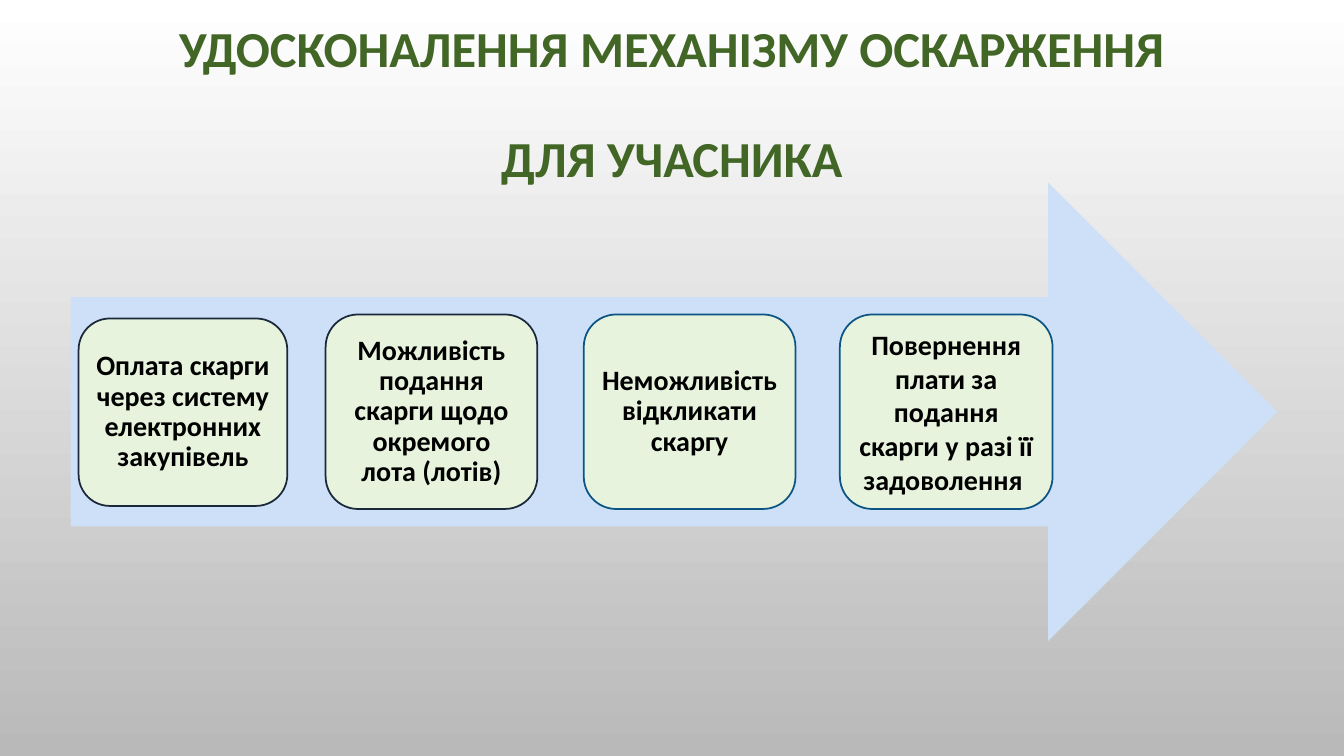
from dataclasses import dataclass

from pptx import Presentation
from pptx import util as u
from pptx.dml.color import RGBColor
from pptx.enum import shapes, text

COLORS = {
    "bg_top": "FFFFFF",
    "bg_bottom": "B9B9B9",
    "title": "426626",
    "arrow": "CDE0F8",
    "card": "E7F3DD",
    "navy": "1A2839",
    "blue": "0B5484",
    "text": "000000",
}


@dataclass
class Card:
    left: float
    top: float
    width: float
    height: float
    line: str
    label: str
    spacing: float = 0.9
    inset_x: float = 0.08
    inset_y: float = 0.08


CARDS = [
    Card(0.78, 3.16, 2.07, 1.86, "navy", "Оплата скарги через систему електронних закупівель"),
    Card(3.23, 3.12, 2.1, 1.93, "navy", "Можливість подання скарги щодо окремого лота (лотів)"),
    Card(5.79, 3.12, 2.1, 1.93, "blue", "Неможливість відкликати скаргу"),
    Card(8.33, 3.12, 2.11, 1.93, "blue",
         "Повернення плати за подання скарги у разі її задоволення ", 1.0, 0.1, 0.05),
]
TITLE_LINES = ["УДОСКОНАЛЕННЯ МЕХАНІЗМУ ОСКАРЖЕННЯ", "ДЛЯ УЧАСНИКА"]


def rgb(name: str) -> RGBColor:
    return RGBColor.from_string(COLORS[name])


def apply(target, values: dict) -> None:
    for name, value in values.items():
        setattr(target, name, value)


def write(tf, lines: list[str], size: int, color: str, spacing: float,
          insets: tuple, gap: float = 0) -> None:
    left, top, right, bottom = (u.Inches(i) for i in insets)
    apply(tf, {
        "word_wrap": True,
        "auto_size": text.MSO_AUTO_SIZE.NONE,
        "vertical_anchor": text.MSO_ANCHOR.MIDDLE,
        "margin_left": left,
        "margin_top": top,
        "margin_right": right,
        "margin_bottom": bottom,
    })
    for i, line in enumerate(lines):
        p = tf.add_paragraph() if i else tf.paragraphs[0]
        apply(p, {
            "alignment": text.PP_ALIGN.CENTER,
            "line_spacing": spacing,
            "space_before": u.Pt(gap if i else 0),
        })
        r = p.add_run()
        r.text = line
        apply(r.font, {"name": "Calibri", "size": u.Pt(size), "bold": True})
        r.font.color.rgb = rgb(color)


def add_block(s, kind, box: tuple, fill: str):
    sp = s.shapes.add_shape(kind, *(u.Inches(v) for v in box))
    sp.shadow.inherit = False
    sp.fill.solid()
    sp.fill.fore_color.rgb = rgb(fill)
    return sp


def add_card(s, card: Card) -> None:
    sp = add_block(s, shapes.MSO_SHAPE.ROUNDED_RECTANGLE,
                   (card.left, card.top, card.width, card.height), "card")
    sp.line.color.rgb = rgb(card.line)
    sp.line.width = u.Pt(1.25)
    write(sp.text_frame, [card.label], 20, "text", card.spacing,
          (card.inset_x, card.inset_y) * 2)


def main() -> None:
    prs = Presentation()
    apply(prs, {"slide_width": u.Inches(13.33), "slide_height": u.Inches(7.5)})
    s = prs.slides.add_slide(prs.slide_layouts[5])

    fill = s.background.fill
    fill.gradient()
    fill.gradient_angle = 270
    for stop, (position, name) in zip(fill.gradient_stops, [(0, "bg_top"), (1, "bg_bottom")]):
        stop.position = position
        stop.color.rgb = rgb(name)

    title = s.shapes.title
    apply(title, {"left": u.Inches(1), "top": u.Inches(0.88),
                  "width": u.Inches(11.33), "height": u.Inches(0.9)})
    write(title.text_frame, TITLE_LINES, 36, "title", 0.9, (0.1, 0.05, 0.1, 0.6), 39.5)

    arrow = add_block(s, shapes.MSO_SHAPE.RIGHT_ARROW, (0.7, 1.81, 11.97, 4.55), "arrow")
    arrow.line.fill.background()
    for card in CARDS:
        add_card(s, card)

    prs.save("out.pptx")


if __name__ == "__main__":
    main()
